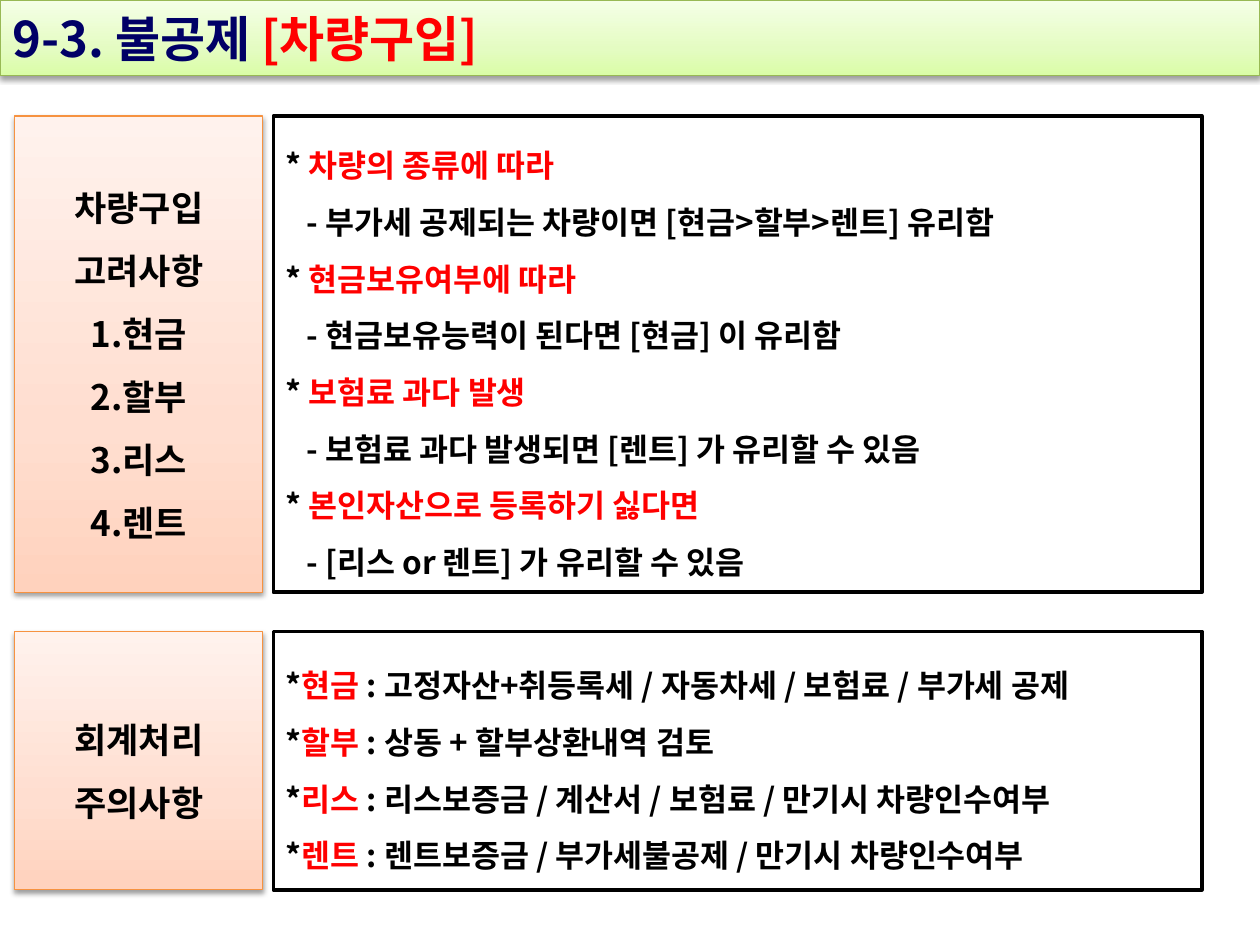
from pptx import Presentation, util as u
from pptx.dml.color import RGBColor
from pptx.enum import shapes, text
from pptx.oxml.ns import qn
from lxml import etree

TITLE = [("9-3. 불공제 ", "navy"), ("[차량구입]", "red")]

CHOICES = [
    ("차량의 종류에 따라", "부가세 공제되는 차량이면 [현금>할부>렌트] 유리함"),
    ("현금보유여부에 따라", "현금보유능력이 된다면 [현금] 이 유리함"),
    ("보험료 과다 발생", "보험료 과다 발생되면 [렌트] 가 유리할 수 있음"),
    ("본인자산으로 등록하기 싫다면", "[리스 or 렌트] 가 유리할 수 있음"),
]
ACCOUNTING = [
    ("현금", "고정자산+취등록세 / 자동차세 / 보험료 / 부가세 공제"),
    ("할부", "상동 + 할부상환내역 검토"),
    ("리스", "리스보증금 / 계산서 / 보험료 / 만기시 차량인수여부"),
    ("렌트", "렌트보증금 / 부가세불공제 / 만기시 차량인수여부"),
]
CHOICE_LABEL = ["차량구입", "고려사항", "1.현금", "2.할부", "3.리스", "4.렌트"]
ACCOUNTING_LABEL = ["회계처리", "주의사항"]

THEME = {
    "font": "Noto Sans CJK KR",
    "title": 28, "label": 20, "body": 18,
    "navy": "000066", "red": "FF0000", "black": "000000", "white": "FFFFFF",
    "green": [(0, "DAFDA7"), (35, "E4FCC2"), (100, "F5FFE7")],
    "green_line": "98B955",
    "peach": [(0, "FFD2BD"), (35, "FFDED0"), (100, "FFF2ED")],
    "peach_line": "F69240",
}
SLIDE_W, SLIDE_H, TITLE_H = 25.4, 19.05, 1.52
LABEL_X, LABEL_W = 0.3, 5
BODY_X, BODY_W = 5.51, 18.72
ROWS = [(2.34, 9.6), (12.73, 5.21)]
SUB_INDENT = 0.42


def rgb(name):
    return RGBColor.from_string(THEME.get(name, name))


def add_color(parent, value, alpha=None):
    clr = etree.SubElement(parent, qn("a:srgbClr"), val=value)
    if alpha:
        etree.SubElement(clr, qn("a:alpha"), val=str(alpha * 1000))


def add_box(s, x, y, w, h, line, line_w):
    sp = s.shapes.add_shape(shapes.MSO_SHAPE.RECTANGLE,
                            u.Cm(x), u.Cm(y), u.Cm(w), u.Cm(h))
    sp.shadow.inherit = False
    sp.line.color.rgb = rgb(line)
    sp.line.width = u.Pt(line_w)
    sp.text_frame.word_wrap = True
    sp.text_frame.vertical_anchor = text.MSO_ANCHOR.MIDDLE
    return sp


def add_glossy_box(s, x, y, w, h, color):
    """Box with an upward three-stop gradient and a soft shadow below."""
    sp = add_box(s, x, y, w, h, color + "_line", 0.75)
    sp.fill.gradient()
    sp.fill.gradient_angle = 90
    stops = sp._element.spPr.find(".//" + qn("a:gsLst"))
    for gs in list(stops):
        stops.remove(gs)
    for pos, value in THEME[color]:
        add_color(etree.SubElement(stops, qn("a:gs"), pos=str(pos * 1000)), value)
    effects = sp._element.spPr.find(qn("a:effectLst"))
    shadow = etree.SubElement(effects, qn("a:outerShdw"), blurRad=str(u.Pt(3.1)),
                              dist=str(u.Pt(1.6)), dir="5400000", rotWithShape="0")
    add_color(shadow, THEME["black"], 38)
    return sp


def add_panel(s, y, h):
    sp = add_box(s, BODY_X, y, BODY_W, h, "black", 2)
    sp.fill.solid()
    sp.fill.fore_color.rgb = rgb("white")
    return sp


def write(sp, lines, size, align=text.PP_ALIGN.LEFT, spacing=1.5):
    """Fill a box from (indent in cm, [(text, colour), ...]) lines."""
    tf = sp.text_frame
    for i, (indent, parts) in enumerate(lines):
        p = tf.add_paragraph() if i else tf.paragraphs[0]
        p.alignment = align
        p.line_spacing = spacing
        if indent:
            pPr = p._p.get_or_add_pPr()
            pPr.set("marL", str(u.Cm(indent)))
            pPr.set("indent", "0")
        for words, color in parts:
            r = p.add_run()
            r.text = words
            r.font.size = u.Pt(THEME[size])
            r.font.bold = True
            r.font.color.rgb = rgb(color)
            r.font.name = THEME["font"]
            etree.SubElement(r._r.get_or_add_rPr(), qn("a:ea"), typeface=THEME["font"])


def main():
    prs = Presentation()
    prs.slide_width, prs.slide_height = u.Cm(SLIDE_W), u.Cm(SLIDE_H)
    s = prs.slides.add_slide(prs.slide_layouts[6])

    banner = add_glossy_box(s, 0, 0, SLIDE_W, TITLE_H, "green")
    write(banner, [(0, TITLE)], "title", spacing=1.0)

    choices = []
    for heading, advice in CHOICES:
        choices.append((0, [("* ", "black"), (heading, "red")]))
        choices.append((SUB_INDENT, [("- " + advice, "black")]))
    accounting = [(0, [("*", "black"), (name + " ", "red"), (": " + items, "black")])
                  for name, items in ACCOUNTING]

    sections = [(CHOICE_LABEL, choices), (ACCOUNTING_LABEL, accounting)]
    for (y, h), (label, body) in zip(ROWS, sections):
        write(add_panel(s, y, h), body, "body")
        write(add_glossy_box(s, LABEL_X, y, LABEL_W, h, "peach"),
              [(0, [(words, "black")]) for words in label],
              "label", text.PP_ALIGN.CENTER)

    prs.save("out.pptx")


if __name__ == "__main__":
    main()
